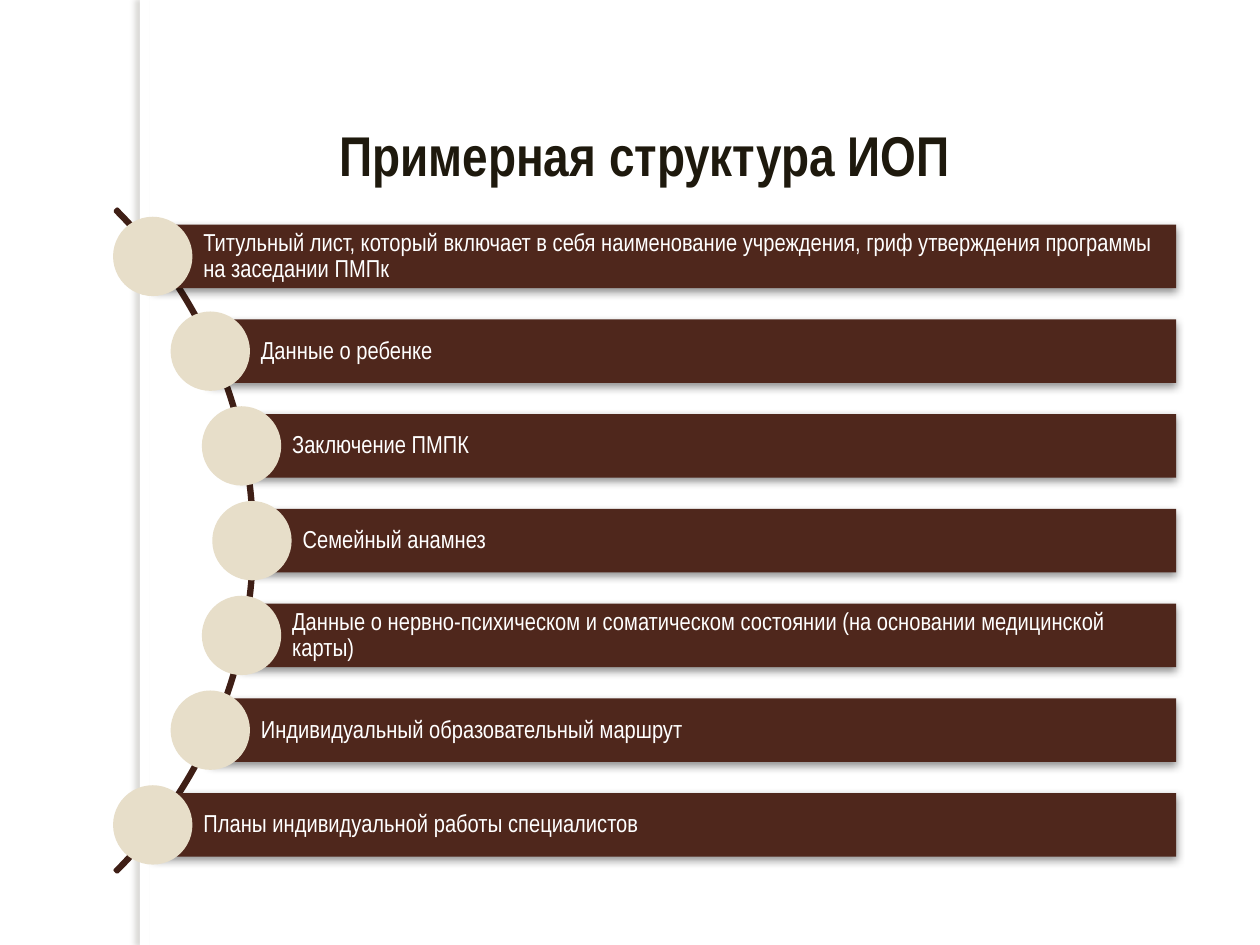
import pptx
import pptx.util
import pptx.dml.color
import pptx.enum.shapes
import pptx.enum.text
import pptx.oxml
import pptx.oxml.ns

Cm = pptx.util.Cm
Pt = pptx.util.Pt
KIND = pptx.enum.shapes.MSO_SHAPE
ALIGN = pptx.enum.text.PP_ALIGN
ANCHOR = pptx.enum.text.MSO_ANCHOR

BROWN, DARK, SAND, WHITE = "4F271C", "3F1F16", "E7DEC9", "FFFFFF"

STEPS = [
    "Титульный лист, который включает в себя наименование учреждения, "
    "гриф утверждения программы на заседании ПМПк",
    "Данные о ребенке",
    "Заключение ПМПК",
    "Семейный анамнез",
    "Данные о нервно-психическом и соматическом состоянии "
    "(на основании медицинской карты)",
    "Индивидуальный образовательный маршрут",
    "Планы индивидуальной работы специалистов",
]
LEFTS = [5.08, 4.87, 4.24, 3.08]  # bar start by distance from the middle row
RIGHT, MID, STEP = 23.71, 10.9, 1.91
BAR, DOT = 1.28, 1.6


def color(code):
    return pptx.dml.color.RGBColor.from_string(code)


def shape(slide, kind, x, y, w, h, fill=None, line=None, width=2):
    item = slide.shapes.add_shape(kind, Cm(x), Cm(y), Cm(w), Cm(h))
    item.shadow.inherit = False
    if fill:
        item.fill.solid()
        item.fill.fore_color.rgb = color(fill)
    else:
        item.fill.background()
    if line:
        item.line.color.rgb = color(line)
        item.line.width = Pt(width)
    else:
        item.line.fill.background()
    return item


def shade(item, code, alpha, blur, dist, angle):
    """Fill the empty effect list of a shape with an outer shadow."""
    effects = item.element.spPr.find(pptx.oxml.ns.qn("a:effectLst"))
    effects.append(pptx.oxml.parse_xml(
        f'<a:outerShdw {pptx.oxml.ns.nsdecls("a")} blurRad="{Pt(blur)}" '
        f'dist="{Pt(dist)}" dir="{angle * 60000}" algn="ctr" rotWithShape="0">'
        f'<a:srgbClr val="{code}"><a:alpha val="{alpha * 1000}"/></a:srgbClr>'
        f'</a:outerShdw>'))


def write(item, text, size=14, code=WHITE, bold=False, align=ALIGN.LEFT,
          anchor=ANCHOR.MIDDLE, space=1.0, inset=None):
    frame = item.text_frame
    frame.word_wrap = True
    frame.vertical_anchor = anchor
    if inset:
        (frame.margin_left, frame.margin_top,
         frame.margin_right, frame.margin_bottom) = [Cm(v) for v in inset]
    para = frame.paragraphs[0]
    para.alignment = align
    para.line_spacing = space
    run = para.add_run()
    run.text = text
    run.font.name = "Arial Narrow"
    run.font.size = Pt(size)
    run.font.bold = bold
    run.font.color.rgb = color(code)


def step(slide, index, text):
    """Draw one bar with its dot, set along the arc."""
    gap = index - len(STEPS) // 2
    left, mid = LEFTS[abs(gap)], MID + gap * STEP
    bar = shape(slide, KIND.RECTANGLE, left, mid - BAR / 2,
                RIGHT - left, BAR, BROWN)
    shade(bar, "000000", 43, 5, 2, 90)
    write(bar, text, space=0.9, inset=(1.02, 0.1, 0.1, 0.1))
    shape(slide, KIND.OVAL, left - DOT / 2, mid - DOT / 2, DOT, DOT, SAND)


def main():
    deck = pptx.Presentation()
    deck.slide_width, deck.slide_height = Cm(25.4), Cm(19.05)
    slide = deck.slides.add_slide(deck.slide_layouts[6])

    # Side strip
    strip = shape(slide, KIND.RECTANGLE, 2.82, 0, 0.2, 19.05, WHITE)
    shade(strip, "736F63", 25, 3, 3, 180)

    # Title
    title = slide.shapes.add_textbox(Cm(4.9), Cm(2.31), Cm(16.21), Cm(1.63))
    write(title, "Примерная структура ИОП", size=32, code="1E190D",
          bold=True, align=ALIGN.CENTER, anchor=ANCHOR.TOP)

    # Arc behind the steps
    size = 18.9
    arc = shape(slide, KIND.BLOCK_ARC, -13.77, MID - size / 2, size, size,
                line=DARK)
    for spot, value in enumerate((189, 27, 0.003)):
        arc.adjustments[spot] = value

    # Steps
    for index, text in enumerate(STEPS):
        step(slide, index, text)

    deck.save("out.pptx")


if __name__ == "__main__":
    main()
